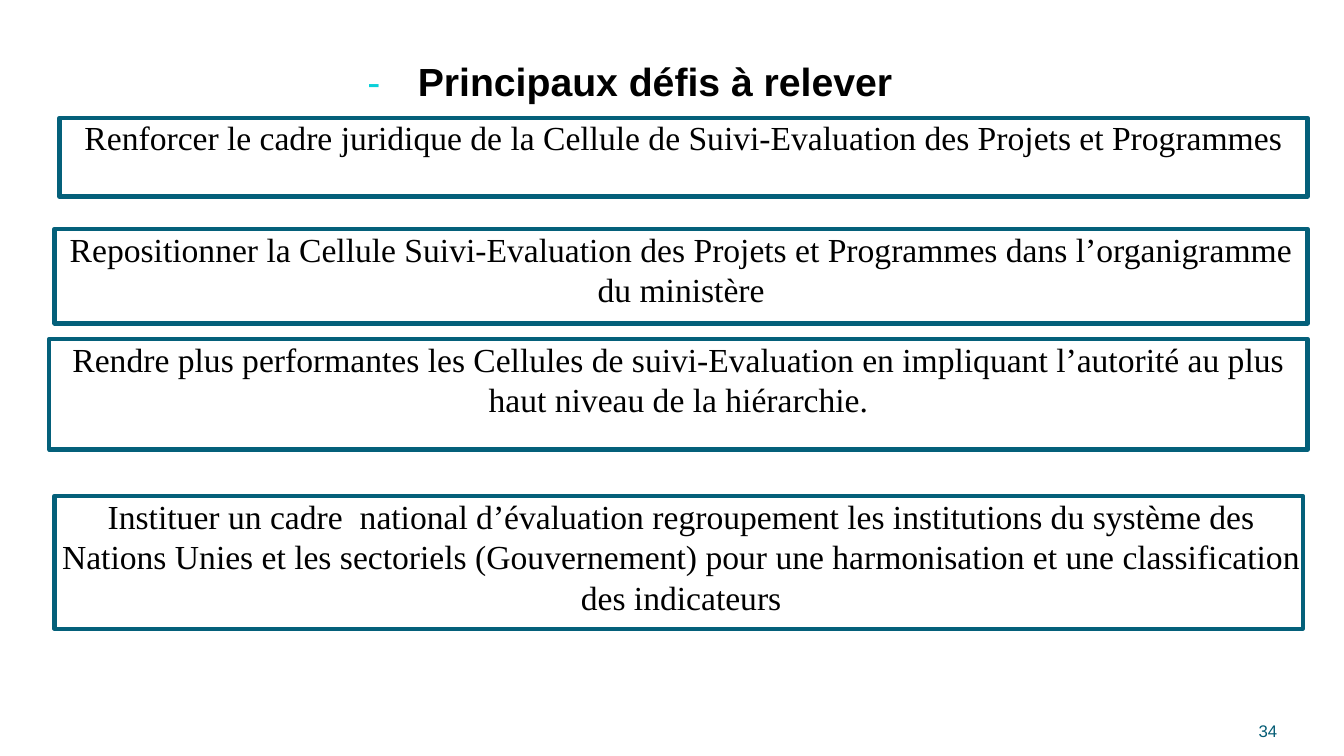
from lxml.etree import SubElement
from pptx import Presentation
from pptx.dml.color import RGBColor
from pptx.enum.shapes import MSO_SHAPE
from pptx.enum.text import MSO_ANCHOR, PP_ALIGN
from pptx.oxml.ns import qn
from pptx.util import Pt

COLORS = {"text": "000000", "dash": "0AD0D9", "frame": "04607A", "number": "045C75"}


def write(shape, *runs, font="Arial", size=24, align=PP_ALIGN.LEFT,
          line_height=None, indent=0, tab=None):
    """Fill a shape with one paragraph of (text, colour, bold) runs."""
    frame = shape.text_frame
    frame.word_wrap = True
    frame.vertical_anchor = MSO_ANCHOR.TOP
    frame.margin_left = frame.margin_right = frame.margin_top = frame.margin_bottom = 0
    paragraph = frame.paragraphs[0]
    paragraph.alignment = align
    if line_height:
        paragraph.line_spacing = Pt(line_height)
    properties = paragraph._p.get_or_add_pPr()
    properties.set("marL", str(Pt(indent)))
    properties.set("indent", "0")
    if tab:
        tabs = SubElement(properties, qn("a:tabLst"))
        SubElement(tabs, qn("a:tab"), pos=str(Pt(tab)), algn="l")
    for text, color, bold in runs:
        run = paragraph.add_run()
        run.text = text
        run.font.name = font
        run.font.size = Pt(size)
        run.font.bold = bold
        run.font.color.rgb = RGBColor.from_string(COLORS[color])


prs = Presentation()
prs.slide_width, prs.slide_height = Pt(960), Pt(540)
slide = prs.slides.add_slide(prs.slide_layouts[5])

# Heading
heading = slide.shapes.title
heading.left, heading.top, heading.width, heading.height = Pt(261.5), Pt(41), Pt(405), Pt(35)
write(heading, ("-\t", "dash", False), ("Principaux défis à relever", "text", True),
      size=28, indent=1, tab=65)

# Framed challenges: left, top, width, height, line height, indent, tab, text
challenges = [
    (42.5, 84.2, 891.5, 56.2, 27.9, 0, None,
     "Renforcer le cadre juridique de la Cellule de Suivi-Evaluation des Projets et Programmes"),
    (39, 163.4, 895, 67.7, 28.8, 0, None,
     "Repositionner la Cellule Suivi-Evaluation des Projets et Programmes dans "
     "l’organigramme du ministère"),
    (35.3, 242, 898.7, 79.2, 28.8, 0, None,
     "Rendre plus performantes les Cellules de suivi-Evaluation en impliquant "
     "l’autorité au plus haut niveau de la hiérarchie."),
    (39, 354.2, 891.5, 95, 28.8, 3.6, 183.6,
     "Instituer un cadre\tnational d’évaluation regroupement les institutions du système "
     "des Nations Unies et les sectoriels (Gouvernement) pour une harmonisation et une "
     "classification des indicateurs"),
]
for left, top, width, height, line_height, indent, tab, challenge in challenges:
    box = slide.shapes.add_shape(MSO_SHAPE.RECTANGLE, Pt(left), Pt(top), Pt(width), Pt(height))
    box.shadow.inherit = False
    box.fill.background()
    box.line.color.rgb = RGBColor.from_string(COLORS["frame"])
    box.line.width = Pt(3)
    write(box, (challenge, "text", False), font="Times New Roman",
          align=PP_ALIGN.CENTER, line_height=line_height, indent=indent, tab=tab)

# Page number
page_number = slide.shapes.add_textbox(Pt(898), Pt(514.5), Pt(16), Pt(16.5))
write(page_number, ("34", "number", False), size=12, indent=1)

prs.save("out.pptx")
